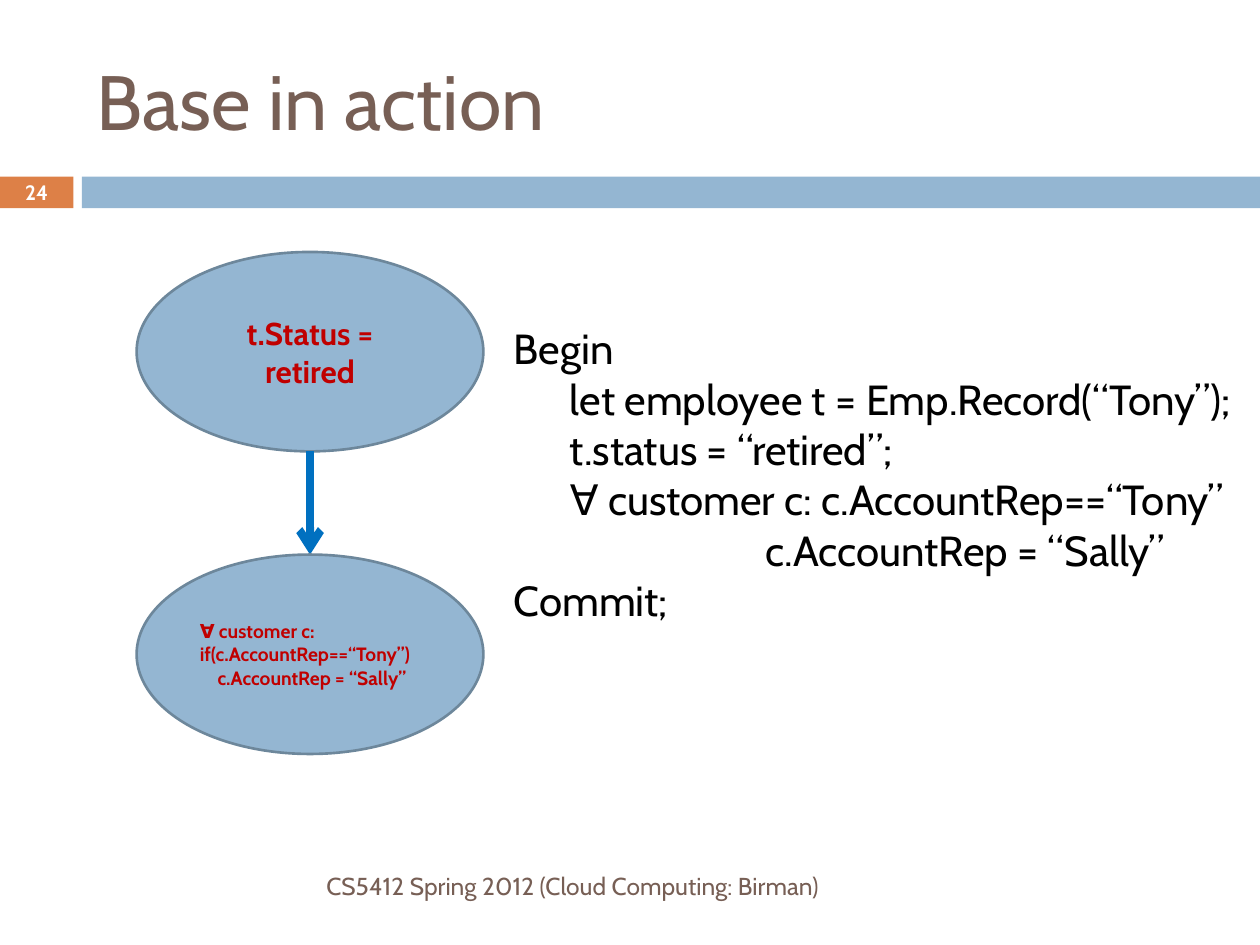
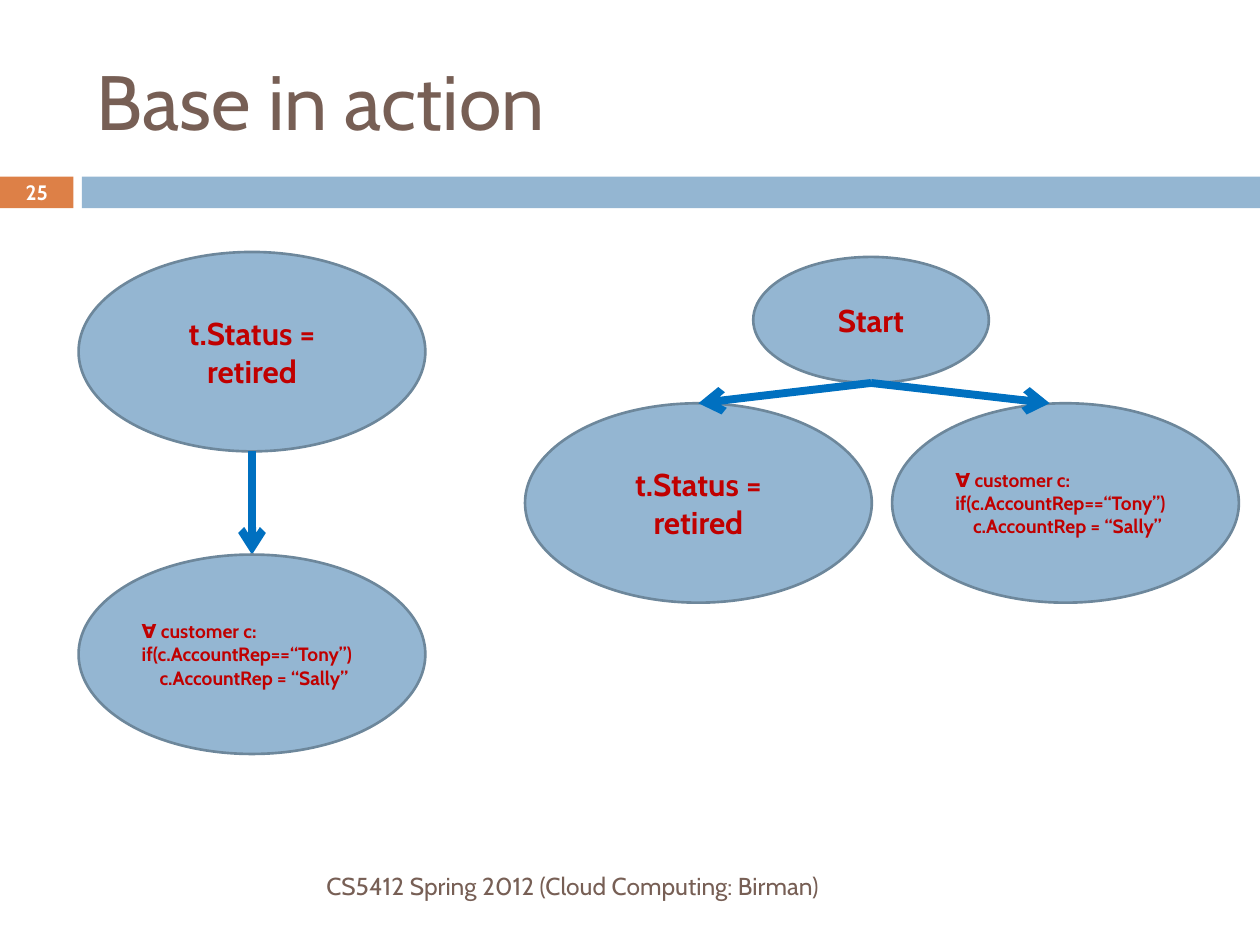
from dataclasses import dataclass
from lxml.etree import SubElement
from pptx import Presentation
from pptx.dml.color import RGBColor
from pptx.enum.shapes import MSO_CONNECTOR, MSO_SHAPE
from pptx.enum.text import MSO_ANCHOR, PP_ALIGN
from pptx.oxml.ns import qn
from pptx.util import Cm, Pt


@dataclass(frozen=True)
class Theme:
    font: str = "Cabin"
    blue: str = "94B6D2"
    edge: str = "6D879B"
    orange: str = "DD8047"
    brown: str = "775F55"
    red: str = "C00000"
    arrow: str = "0070C0"
    black: str = "000000"
    white: str = "FFFFFF"
    title: float = 44
    code: float = 24
    label: float = 18
    footer: float = 14
    number: float = 11.9
    rule: float = 11


class Deck:
    def __init__(self, theme):
        self.theme = theme
        self.show = Presentation()
        self.show.slide_width = Cm(25.4)
        self.show.slide_height = Cm(19.05)
        self.slide = None

    def page(self, title, number):
        t = self.theme
        self.slide = self.show.slides.add_slide(self.show.slide_layouts[6])
        self.shape(MSO_SHAPE.RECTANGLE, 0, 3.56, 1.48, 0.64, t.orange)
        self.shape(MSO_SHAPE.RECTANGLE, 1.65, 3.56, 23.75, 0.64, t.blue)
        middle = MSO_ANCHOR.MIDDLE
        self.text(1.7, 0.64, 22.66, 2.74, [(title, 0)], t.title, t.brown, anchor=middle)
        self.text(1.7, 17.35, 15.06, 1.02, [(FOOTER, 0)], t.footer, t.brown,
                  PP_ALIGN.RIGHT, middle)
        self.text(0, 3.53, 1.48, 0.69, [(str(number), 0)], t.number, t.white,
                  PP_ALIGN.CENTER, middle, True)

    def shape(self, kind, x, y, w, h, fill, line=None):
        item = self.slide.shapes.add_shape(kind, Cm(x), Cm(y), Cm(w), Cm(h))
        item.shadow.inherit = False
        item.fill.solid()
        item.fill.fore_color.rgb = RGBColor.from_string(fill)
        if line:
            item.line.color.rgb = RGBColor.from_string(line)
            item.line.width = Pt(1.5)
        else:
            item.line.fill.background()
        return item

    def put(self, frame, lines, size, color, align, anchor, bold):
        frame.word_wrap = True
        frame.vertical_anchor = anchor
        for i, (words, indent) in enumerate(lines):
            para = frame.add_paragraph() if i else frame.paragraphs[0]
            para.alignment = align
            if indent:
                para._p.get_or_add_pPr().set("marL", str(Cm(indent)))
            run = para.add_run()
            run.text = words
            run.font.name = self.theme.font
            run.font.size = Pt(size)
            run.font.bold = bold
            run.font.color.rgb = RGBColor.from_string(color)

    def text(self, x, y, w, h, lines, size, color, align=PP_ALIGN.LEFT,
             anchor=MSO_ANCHOR.TOP, bold=False):
        box = self.slide.shapes.add_textbox(Cm(x), Cm(y), Cm(w), Cm(h))
        self.put(box.text_frame, lines, size, color, align, anchor, bold)

    def oval(self, mid, top, lines, size, align=PP_ALIGN.CENTER, w=6.99, h=4.02):
        t = self.theme
        item = self.shape(MSO_SHAPE.OVAL, mid - w / 2, top, w, h, t.blue, t.edge)
        self.put(item.text_frame, lines, size, t.red, align, MSO_ANCHOR.MIDDLE, True)

    def status(self, mid, top):
        self.oval(mid, top, STATUS, self.theme.label)

    def rule(self, mid, top):
        self.oval(mid, top, RULE, self.theme.rule, PP_ALIGN.LEFT)

    def arrow(self, x1, y1, x2, y2):
        line = self.slide.shapes.add_connector(
            MSO_CONNECTOR.STRAIGHT, Cm(x1), Cm(y1), Cm(x2), Cm(y2))
        line.line.color.rgb = RGBColor.from_string(self.theme.arrow)
        line.line.width = Pt(4.5)
        SubElement(line.line._get_or_add_ln(), qn("a:tailEnd"), type="arrow")
        SubElement(line._element.spPr, qn("a:effectLst"))

    def chain(self, mid):
        self.status(mid, 5.08)
        self.arrow(mid, 9.1, mid, 11.18)
        self.rule(mid, 11.18)

    def fork(self, mid, top):
        row = top + 2.95
        self.status(14.08, row)
        self.rule(21.48, row)
        self.oval(mid, top, [("Start", 0)], self.theme.label, w=4.75, h=2.54)
        for end in (14.08, 21.16):
            self.arrow(mid, top + 2.54, end, row)


FOOTER = "CS5412 Spring 2012 (Cloud Computing: Birman)"
STATUS = [("t.Status = retired", 0)]
RULE = [("∀ customer c: if(c.AccountRep==“Tony”)", 0), ("c.AccountRep = “Sally”", 0.36)]
CODE = [
    ("Begin", 1.02),
    ("let employee t = Emp.Record(“Tony”);", 2.15),
    ("t.status = “retired”;", 2.15),
    ("∀ customer c: c.AccountRep==“Tony”", 2.15),
    ("c.AccountRep = “Sally”", 6.1),
    ("Commit;", 1.02),
]


def main():
    theme = Theme()
    deck = Deck(theme)
    deck.page("Base in action", 24)
    deck.text(9.09, 6.38, 16.31, 6.4, CODE, theme.code, theme.black)
    deck.chain(6.25)
    deck.page("Base in action", 25)
    deck.chain(5.08)
    deck.fork(17.56, 5.18)
    deck.show.save("out.pptx")


if __name__ == "__main__":
    main()
